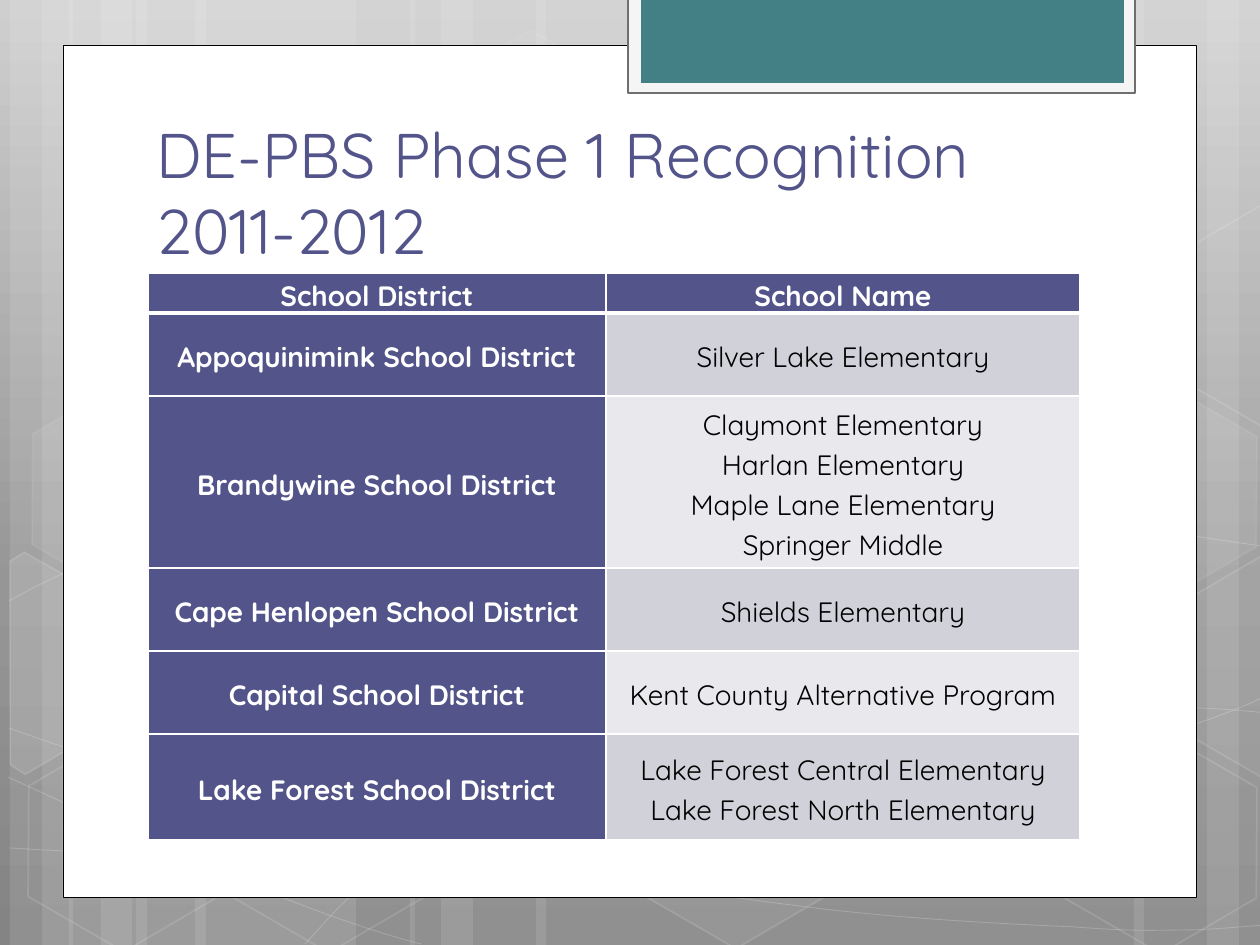
from copy import deepcopy
from dataclasses import dataclass
from math import cos, radians, sin
from typing import Optional

from lxml.etree import SubElement
from pptx import Presentation
from pptx.dml.color import RGBColor as RGB
from pptx.enum.shapes import MSO_SHAPE as SHAPE
from pptx.enum.text import MSO_ANCHOR as ANCHOR, MSO_AUTO_SIZE as AUTO, PP_ALIGN as ALIGN
from pptx.oxml.ns import qn
from pptx.util import Emu, Pt

EMU_PER_PX = 914400 / 126
W, H = 1260, 945
TILT = 30


@dataclass(frozen=True)
class Theme:
    font: str = "Quicksand"
    title_pt: int = 36
    cell_pt: int = 16
    white: str = "FFFFFF"
    black: str = "000000"
    indigo: str = "53548A"
    teal: str = "438086"
    tab: str = "F5F5F5"
    tab_line: str = "6F6F6F"
    bands: tuple = ("D1D1DA", "E9E9ED")
    backdrop: tuple = ((0, "CFCFCF"), (0.62, "969696"), (1, "848484"))


@dataclass(frozen=True)
class Paint:
    """Fill and line; the alphas are percentages of opacity."""
    fill: Optional[str] = None
    fill_alpha: int = 100
    line: Optional[str] = None
    line_pt: float = 1
    line_alpha: int = 100


@dataclass(frozen=True)
class Box:
    x: int
    y: int
    w: int
    h: int
    paint: Paint


@dataclass(frozen=True)
class CutHexagon:
    center: tuple
    points: list
    paint: Paint


@dataclass(frozen=True)
class District:
    name: str
    schools: tuple
    height: int


T = Theme()


def glass(fill_alpha: int, line_alpha: int = 12) -> Paint:
    return Paint(T.white if fill_alpha else None, fill_alpha, T.white, 1, line_alpha)


STRIPE = Paint(T.white, 10)
STRIPES = [(136, 220), (10, 63), (42, 105), (195, 220), (69, 63), (101, 105),
           (924, 220), (1207, 63), (1134, 105), (536, 388), (410, 63), (441, 105)]

# Each curve is a start point followed by triples of Bezier control points.
CURVE = Paint(line=T.white, line_pt=0.5, line_alpha=20)
CURVES = [
    [(9, 848), (77, 852), (145, 856), (239, 854), (334, 853), (451, 851), (577, 838),
     (703, 825), (882, 801), (998, 777), (1113, 753), (1231, 716), (1269, 694)],
    [(9, 601), (45, 581), (82, 562), (152, 543), (224, 524), (326, 496), (437, 488),
     (549, 479), (685, 478), (824, 488), (963, 498), (1193, 537), (1269, 547)],
    [(8, 777), (160, 847), (311, 916), (421, 944)],
    [(9, 728), (48, 742), (88, 756), (161, 776), (234, 795), (344, 827), (450, 848),
     (554, 869), (687, 892), (791, 905), (896, 919), (1008, 924), (1075, 927),
     (1140, 932), (1158, 930), (1191, 930), (1223, 929), (1246, 926), (1269, 925)],
    [(305, 944), (328, 919), (350, 893), (381, 871), (411, 848), (454, 823), (489, 805),
     (524, 787), (546, 780), (592, 767), (638, 755), (722, 737), (766, 728),
     (811, 719), (818, 719), (857, 717), (896, 713), (958, 709), (1000, 708),
     (1045, 707), (1116, 708), (1116, 708), (1144, 708), (1173, 708), (1201, 708),
     (1223, 709), (1245, 711), (1256, 712), (1268, 713), (1264, 712), (1268, 713)],
]

HEXAGONS = [Box(x, y, 220, 192, paint) for x, y, paint in [
    (421, 45, glass(4, 8)), (626, 742, glass(6)), (14, 745, glass(0)),
    (18, 393, glass(7, 8)), (219, 746, glass(0)), (949, 571, glass(10)),
    (1051, 747, glass(0)), (1051, 396, glass(7, 8))]]

RIGHT_CUT = [(1167, 611), (1261, 556), (1271, 562), (1271, 772), (1263, 777), (1167, 722)]
CUT_HEXAGONS = [
    CutHexagon((45, 674), [(10, 561), (24, 552), (121, 607), (120, 718), (25, 774),
                           (10, 765)], glass(10)),
    CutHexagon((1241, 655), RIGHT_CUT, glass(4)),
    CutHexagon((1241, 304), [(x, y - 351) for x, y in RIGHT_CUT], glass(0)),
]

PANELS = [
    Box(63, 45, 1134, 853, Paint(T.white, line=T.black, line_pt=0.5)),
    Box(628, -2, 507, 95, Paint(T.tab, line=T.tab_line, line_pt=1.25)),
    Box(641, -2, 483, 85, Paint(T.teal)),
]

HEADERS = ("School District", "School Name")
HEADER_H = 40
COLUMNS = (458, 474)
DISTRICTS = [
    District("Appoquinimink School District", ("Silver Lake Elementary",), 83),
    District("Brandywine School District",
             ("Claymont Elementary", "Harlan Elementary", "Maple Lane Elementary",
              "Springer Middle"), 172),
    District("Cape Henlopen School District", ("Shields Elementary",), 83),
    District("Capital School District", ("Kent County Alternative Program",), 83),
    District("Lake Forest School District",
             ("Lake Forest Central Elementary", "Lake Forest North Elementary"), 106),
]


def px(n: float) -> Emu:
    return Emu(round(n * EMU_PER_PX))


def color_fill(fill, color: str, alpha: int = 100) -> None:
    fill.solid()
    fill.fore_color.rgb = RGB.from_string(color)
    if alpha < 100:
        clr = fill._xPr.find(".//" + qn("a:srgbClr"))
        SubElement(clr, qn("a:alpha"), val=str(alpha * 1000))


def apply_paint(sp, paint: Paint) -> None:
    sp.shadow.inherit = False
    if paint.fill:
        color_fill(sp.fill, paint.fill, paint.fill_alpha)
    else:
        sp.fill.background()
    if paint.line:
        color_fill(sp.line.fill, paint.line, paint.line_alpha)
        sp.line.width = Pt(paint.line_pt)
    else:
        sp.line.fill.background()


def add_box(s, box: Box, kind=SHAPE.RECTANGLE):
    sp = s.shapes.add_shape(kind, px(box.x), px(box.y), px(box.w), px(box.h))
    apply_paint(sp, box.paint)
    return sp


def add_outline(s, points: list, paint: Paint, close: bool):
    builder = s.shapes.build_freeform(*points[0], scale=EMU_PER_PX)
    builder.add_line_segments(points[1:], close=close)
    sp = builder.convert_to_shape()
    apply_paint(sp, paint)
    return sp


def add_curve(s, points: list) -> None:
    """Draw the control points as an outline, then join each three into a Bezier."""
    sp = add_outline(s, points, CURVE, close=False)
    outline = sp._element.find(".//" + qn("a:path"))
    segments = outline.findall(qn("a:lnTo"))
    for i in range(0, len(segments), 3):
        bezier = SubElement(outline, qn("a:cubicBezTo"))
        for segment in segments[i:i + 3]:
            bezier.append(segment[0])
            outline.remove(segment)


def add_cut_hexagon(s, cut: CutHexagon) -> None:
    """Turn the points back about the centre, then tilt the shape into place."""
    (cx, cy), c, d = cut.center, cos(radians(TILT)), sin(radians(TILT))
    level = [(round(cx + (x - cx) * c + (y - cy) * d),
              round(cy - (x - cx) * d + (y - cy) * c)) for x, y in cut.points]
    add_outline(s, level, cut.paint, close=True).rotation = TILT


def paint_background(s) -> None:
    fill = s.background.fill
    fill.gradient()
    fill.gradient_angle = 270
    stops = s.element.find(".//" + qn("a:gsLst"))
    stops.append(deepcopy(stops[-1]))
    for stop, (position, color) in zip(fill.gradient_stops, T.backdrop):
        stop.color.rgb = RGB.from_string(color)
        stop.position = position


def style_font(p, size: int, color: str, bold: bool = False) -> None:
    for r in p.runs:
        r.font.name, r.font.size, r.font.bold = T.font, Pt(size), bold
        r.font.color.rgb = RGB.from_string(color)


def place_title(s, text: str) -> None:
    title = s.shapes.title
    title.left, title.top, title.width, title.height = px(144), px(116), px(968), px(157)
    s.shapes._spTree.append(title._element)
    tf = title.text_frame
    tf.text = text
    tf.auto_size, tf.vertical_anchor, tf.word_wrap = AUTO.NONE, ANCHOR.BOTTOM, True
    p = tf.paragraphs[0]
    p.alignment = ALIGN.LEFT
    style_font(p, T.title_pt, T.indigo)


def fill_cell(cell, lines: tuple, fill: str, strong: bool, bottom_pt: int = 1) -> None:
    cell.margin_left = cell.margin_right = px(9)
    cell.margin_top = cell.margin_bottom = 0
    cell.vertical_anchor = ANCHOR.MIDDLE
    tc_pr = cell._tc.get_or_add_tcPr()
    for side, width in zip("LRTB", (1, 1, 1, bottom_pt)):
        ln = SubElement(tc_pr, qn(f"a:ln{side}"), w=str(Pt(width)))
        SubElement(SubElement(ln, qn("a:solidFill")), qn("a:srgbClr"), val=T.white)
    color_fill(cell.fill, fill)
    cell.text_frame.text = "\n".join(lines)
    for p in cell.text_frame.paragraphs:
        p.alignment, p.line_spacing = ALIGN.CENTER, 1.15
        p.space_after = Pt(5 if strong else 0)
        style_font(p, T.cell_pt, T.white if strong else T.black, strong)


def add_district_table(s) -> None:
    heights = [HEADER_H, *(d.height for d in DISTRICTS)]
    table = s.shapes.add_table(len(heights), len(COLUMNS), px(148), px(273),
                               px(sum(COLUMNS)), px(sum(heights))).table
    table.first_row = table.horz_banding = False
    for column, width in zip(table.columns, COLUMNS):
        column.width = px(width)
    for row, height in zip(table.rows, heights):
        row.height = px(height)
    for col, header in enumerate(HEADERS):
        fill_cell(table.cell(0, col), (header,), T.indigo, True, bottom_pt=3)
    for i, d in enumerate(DISTRICTS):
        fill_cell(table.cell(i + 1, 0), (d.name,), T.indigo, True)
        fill_cell(table.cell(i + 1, 1), d.schools, T.bands[i % 2], False)


def main() -> None:
    prs = Presentation()
    prs.slide_width, prs.slide_height = px(W), px(H)
    s = prs.slides.add_slide(prs.slide_layouts[5])
    paint_background(s)
    for x, w in STRIPES:
        add_box(s, Box(x, 0, w, H, STRIPE))
    for curve in CURVES:
        add_curve(s, curve)
    for box in HEXAGONS:
        sp = add_box(s, box, SHAPE.HEXAGON)
        sp.rotation = TILT
        sp.adjustments[0], sp.adjustments[1] = 0.285, 1.155
    for cut in CUT_HEXAGONS:
        add_cut_hexagon(s, cut)
    for box in PANELS:
        add_box(s, box)
    place_title(s, "DE-PBS Phase 1 Recognition\v2011-2012")
    add_district_table(s)
    prs.save("out.pptx")


if __name__ == "__main__":
    main()
